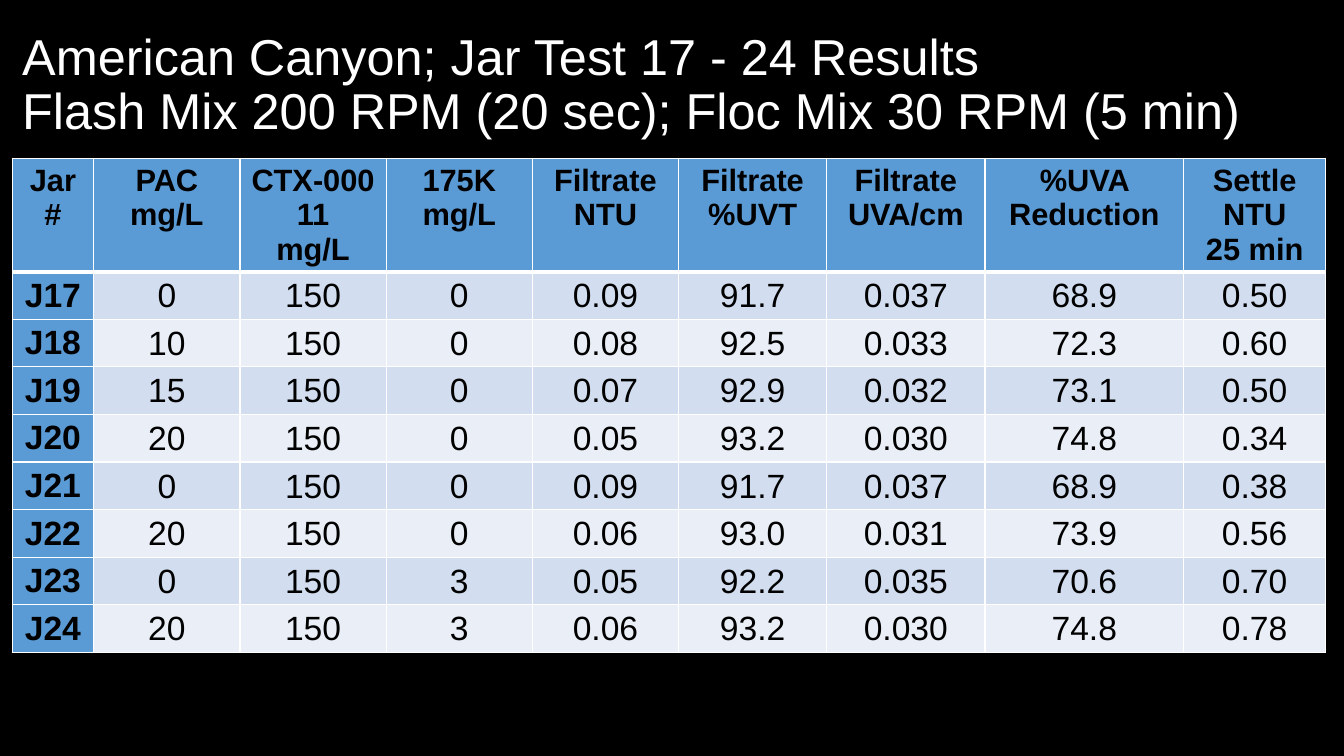
from lxml import etree
from pptx import Presentation
from pptx import util as u
from pptx.dml.color import RGBColor
from pptx.enum import text
from pptx.oxml import ns

TITLE = ("American Canyon; Jar Test 17 - 24 Results\v"
         "Flash Mix 200 RPM (20 sec); Floc Mix 30 RPM (5 min)")
HEADINGS = ["Jar#", "PAC\nmg/L", "CTX-00011\nmg/L", "175K\nmg/L", "Filtrate\nNTU",
            "Filtrate\n%UVT", "Filtrate\nUVA/cm", "%UVA Reduction", "Settle\nNTU\n25 min"]
JARS = [
    ("J17", "0", "150", "0", "0.09", "91.7", "0.037", "68.9", "0.50"),
    ("J18", "10", "150", "0", "0.08", "92.5", "0.033", "72.3", "0.60"),
    ("J19", "15", "150", "0", "0.07", "92.9", "0.032", "73.1", "0.50"),
    ("J20", "20", "150", "0", "0.05", "93.2", "0.030", "74.8", "0.34"),
    ("J21", "0", "150", "0", "0.09", "91.7", "0.037", "68.9", "0.38"),
    ("J22", "20", "150", "0", "0.06", "93.0", "0.031", "73.9", "0.56"),
    ("J23", "0", "150", "3", "0.05", "92.2", "0.035", "70.6", "0.70"),
    ("J24", "20", "150", "3", "0.06", "93.2", "0.030", "74.8", "0.78"),
]
COLUMN_WIDTHS = [0.81, 1.45, 1.45, 1.45, 1.45, 1.47, 1.57, 1.97, 1.41]
ROW_HEIGHT = 0.41
LEFT, TITLE_TOP, TABLE_TOP = 0.12, 0.13, 1.57
COLORS = {"background": "000000", "title": "FFFFFF", "text": "000000", "border": "FFFFFF",
          "heading": "5B9BD5", "odd": "D2DEEF", "even": "EAEFF7"}
FONT = "Arial"


def color(key):
    return RGBColor.from_string(COLORS[key])


def style_font(font, size, key, bold=False):
    font.name, font.size, font.bold = FONT, u.Pt(size), bold
    font.color.rgb = color(key)


def add_borders(cell, bottom):
    """Draw the cell's four edges; widths in points, 1 except at the bottom."""
    properties = cell._tc.get_or_add_tcPr()
    for place, (edge, width) in enumerate(
            [("lnL", 1), ("lnR", 1), ("lnT", 1), ("lnB", bottom)]):
        line = etree.Element(ns.qn(f"a:{edge}"), w=str(u.Pt(width)))
        fill = etree.SubElement(line, ns.qn("a:solidFill"))
        etree.SubElement(fill, ns.qn("a:srgbClr"), val=COLORS["border"])
        properties.insert(place, line)


def fill_cell(cell, words, row, column):
    is_heading = row == 0 or column == 0
    cell.text = words
    cell.fill.solid()
    cell.fill.fore_color.rgb = color(
        "heading" if is_heading else "odd" if row % 2 else "even")
    if not is_heading:
        cell.vertical_anchor = text.MSO_ANCHOR.MIDDLE
        cell.margin_left = cell.margin_right = cell.margin_top = u.Inches(0.01)
        cell.margin_bottom = 0
    for paragraph in cell.text_frame.paragraphs:
        paragraph.alignment = text.PP_ALIGN.CENTER
        style_font(paragraph.font, 24 if row else 22, "text", is_heading)
    add_borders(cell, 1 if row else 3)


def main():
    prs = Presentation()
    prs.slide_width, prs.slide_height = u.Inches(13.33), u.Inches(7.5)
    slide = prs.slides.add_slide(prs.slide_layouts[5])
    slide.background.fill.solid()
    slide.background.fill.fore_color.rgb = color("background")
    width = sum(COLUMN_WIDTHS)

    title = slide.shapes.title
    title.left, title.top = u.Inches(LEFT), u.Inches(TITLE_TOP)
    title.width, title.height = u.Inches(width), u.Inches(1.45)
    title.text_frame.text = TITLE
    title.text_frame.vertical_anchor = text.MSO_ANCHOR.MIDDLE
    title.text_frame.auto_size = text.MSO_AUTO_SIZE.NONE
    heading = title.text_frame.paragraphs[0]
    heading.alignment, heading.line_spacing = text.PP_ALIGN.LEFT, 0.9
    style_font(heading.font, 36, "title")

    rows = [HEADINGS, *JARS]
    results = slide.shapes.add_table(
        len(rows), len(HEADINGS), u.Inches(LEFT), u.Inches(TABLE_TOP),
        u.Inches(width), u.Inches(ROW_HEIGHT * len(rows))).table
    results.first_col = True
    for column, column_width in zip(results.columns, COLUMN_WIDTHS):
        column.width = u.Inches(column_width)
    for r, row in enumerate(rows):
        for c, words in enumerate(row):
            fill_cell(results.cell(r, c), words, r, c)

    prs.save("out.pptx")


if __name__ == "__main__":
    main()
